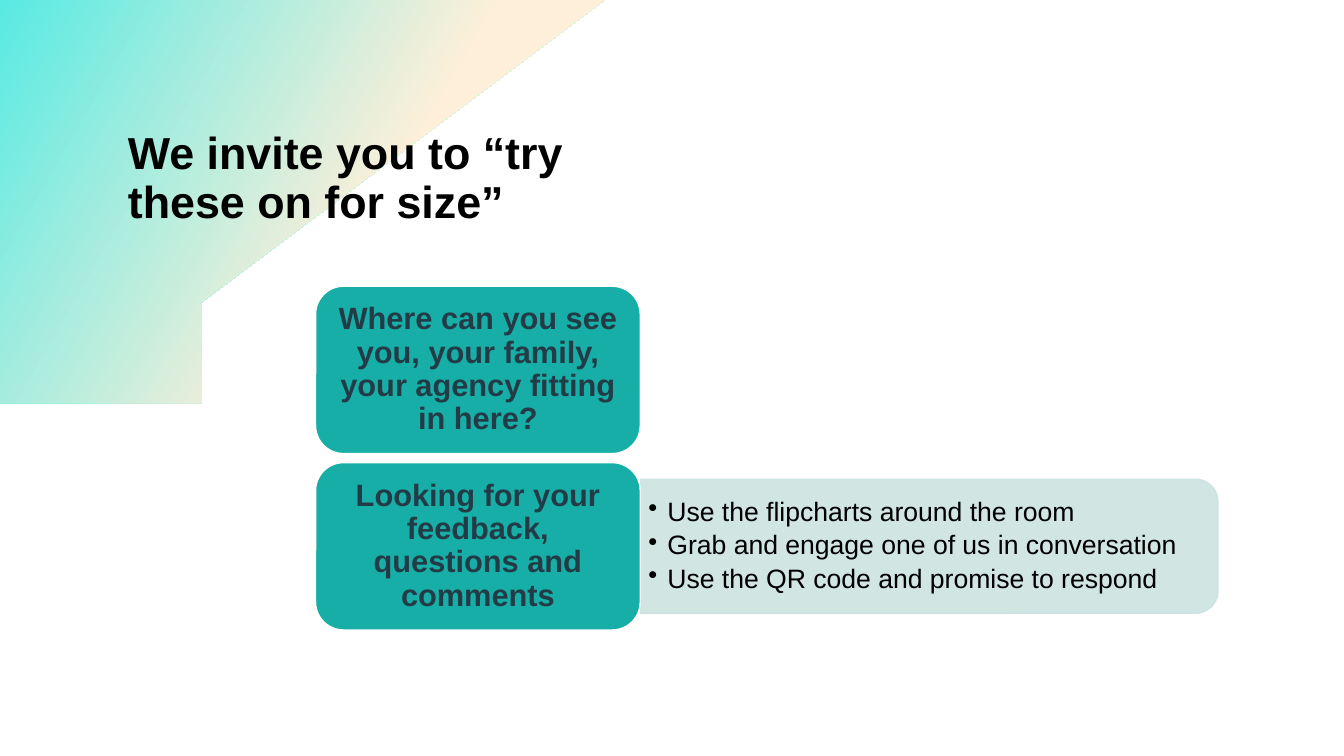
"""Builds the feedback invitation slide."""
from dataclasses import dataclass

from lxml.etree import SubElement
from pptx import Presentation
from pptx.dml.color import RGBColor
from pptx.enum.shapes import MSO_SHAPE
from pptx.enum.text import MSO_ANCHOR, PP_ALIGN
from pptx.oxml.ns import qn
from pptx.shapes.autoshape import Shape
from pptx.slide import Slide
from pptx.util import Inches, Pt

Point = tuple[float, float]

TEAL = "16AEA7"
PALE = "CCE3E1"
NAVY = "233B47"
BLACK = "000000"
WHITE = "FFFFFF"
CREAM = "FEEFD9"
AQUA = "58EAE3"

CARD_LEFT, CARD_TOP, CARD_PITCH = 3.13, 2.84, 1.75
CARD_WIDTH, CARD_HEIGHT = 3.22, 1.66
DETAIL_WIDTH, DETAIL_HEIGHT = 5.73, 1.33


@dataclass
class TextStyle:
    size: float
    color: str
    bold: bool = False
    align: PP_ALIGN = PP_ALIGN.LEFT
    anchor: MSO_ANCHOR = MSO_ANCHOR.TOP
    inset: Point = (0.1, 0.05)
    space_after: float = 0
    bullet_indent: float = 0


@dataclass
class Card:
    prompt: str
    details: tuple[str, ...] = ()


TITLE_STYLE = TextStyle(32, BLACK, bold=True)
PROMPT_STYLE = TextStyle(22, NAVY, bold=True, align=PP_ALIGN.CENTER,
                         anchor=MSO_ANCHOR.MIDDLE, inset=(0.09, 0.05))
DETAIL_STYLE = TextStyle(19, BLACK, anchor=MSO_ANCHOR.MIDDLE, inset=(0.08, 0.04),
                         space_after=3.3, bullet_indent=0.19)

CARDS = (
    Card("Where can you see you, your family, your agency fitting in here?"),
    Card("Looking for your feedback, questions and comments",
         ("Use the flipcharts around the room",
          "Grab and engage one of us in conversation",
          "Use the QR code and promise to respond")),
)


def rgb(value: str) -> RGBColor:
    return RGBColor.from_string(value)


def write_text(sp: Shape, text: str, style: TextStyle) -> None:
    tf = sp.text_frame
    tf.word_wrap = True
    tf.vertical_anchor = style.anchor
    tf.margin_left = tf.margin_right = Inches(style.inset[0])
    tf.margin_top = tf.margin_bottom = Inches(style.inset[1])
    tf.text = text
    for p in tf.paragraphs:
        p.alignment = style.align
        p.line_spacing = 0.9
        p.space_after = Pt(style.space_after)
        if style.bullet_indent:
            indent = Inches(style.bullet_indent)
            pPr = p._p.get_or_add_pPr()
            pPr.set("marL", str(indent))
            pPr.set("indent", str(-indent))
            SubElement(pPr, qn("a:buChar")).set("char", "•")
        for r in p.runs:
            r.font.name = "Arial"
            r.font.size = Pt(style.size)
            r.font.bold = style.bold
            r.font.color.rgb = rgb(style.color)


def add_text(s: Slide, left: float, top: float, width: float, height: float,
             text: str, style: TextStyle) -> None:
    sp = s.shapes.add_textbox(Inches(left), Inches(top), Inches(width), Inches(height))
    write_text(sp, text, style)


def add_panel(s: Slide, kind: MSO_SHAPE, left: float, top: float, width: float,
              height: float, fill: str, line: str) -> Shape:
    sp = s.shapes.add_shape(kind, Inches(left), Inches(top), Inches(width), Inches(height))
    sp.shadow.inherit = False
    sp.fill.solid()
    sp.fill.fore_color.rgb = rgb(fill)
    sp.line.color.rgb = rgb(line)
    sp.line.width = Pt(1)
    return sp


def curve(a: Point, b: Point, c: Point, d: Point, steps: int = 24) -> list[Point]:
    points = []
    for i in range(1, steps + 1):
        t = i / steps
        weights = ((1 - t) ** 3, 3 * t * (1 - t) ** 2, 3 * t * t * (1 - t), t ** 3)
        x, y = (sum(w * v for w, v in zip(weights, axis)) for axis in zip(a, b, c, d))
        points.append((x, y))
    return points


def add_corner_wave(s: Slide) -> None:
    points = [(-0.01, 3.64), (-0.01, 0), (6.45, 0), (2.17, 3.36), (2.12, 3.4)]
    points += curve((2.12, 3.4), (1.76, 3.65), (1.34, 3.79), (0.92, 3.8))
    points += curve((0.92, 3.8), (0.88, 3.8), (0.84, 3.8), (0.79, 3.8))
    points += curve((0.79, 3.8), (0.56, 3.8), (0.32, 3.76), (0.09, 3.68))
    builder = s.shapes.build_freeform(*points[0], scale=Inches(1))
    builder.add_line_segments(points[1:], close=True)
    sp = builder.convert_to_shape()
    sp.shadow.inherit = False
    sp.line.fill.background()
    sp.fill.gradient()
    sp.fill.gradient_angle = 330
    for stop, position, color in zip(sp.fill.gradient_stops, (0, 0.6), (AQUA, CREAM)):
        stop.position = position
        stop.color.rgb = rgb(color)


def add_details(s: Slide, card_top: float, details: tuple[str, ...]) -> None:
    left = CARD_LEFT + CARD_WIDTH
    middle = card_top + CARD_HEIGHT / 2
    sp = add_panel(s, MSO_SHAPE.ROUND_2_SAME_RECTANGLE,
                   left + (DETAIL_WIDTH - DETAIL_HEIGHT) / 2, middle - DETAIL_WIDTH / 2,
                   DETAIL_HEIGHT, DETAIL_WIDTH, PALE, PALE)
    sp.rotation = 90
    for color in sp.element.spPr.iter(qn("a:srgbClr")):
        SubElement(color, qn("a:alpha")).set("val", "90000")
    add_text(s, left, middle - 0.6, 5.67, 1.2, "\n".join(details), DETAIL_STYLE)


def add_card(s: Slide, top: float, card: Card) -> None:
    if card.details:
        add_details(s, top, card.details)
    sp = add_panel(s, MSO_SHAPE.ROUNDED_RECTANGLE, CARD_LEFT, top,
                   CARD_WIDTH, CARD_HEIGHT, TEAL, WHITE)
    write_text(sp, card.prompt, PROMPT_STYLE)


def main() -> None:
    prs = Presentation()
    prs.slide_width, prs.slide_height = Inches(13.33), Inches(7.5)
    s = prs.slides.add_slide(prs.slide_layouts[6])
    add_corner_wave(s)
    add_text(s, 1.17, 1.25, 5.5, 1.16, "We invite you to “try these on for size”", TITLE_STYLE)
    for i, card in enumerate(CARDS):
        add_card(s, CARD_TOP + i * CARD_PITCH, card)
    prs.save("out.pptx")


if __name__ == "__main__":
    main()
